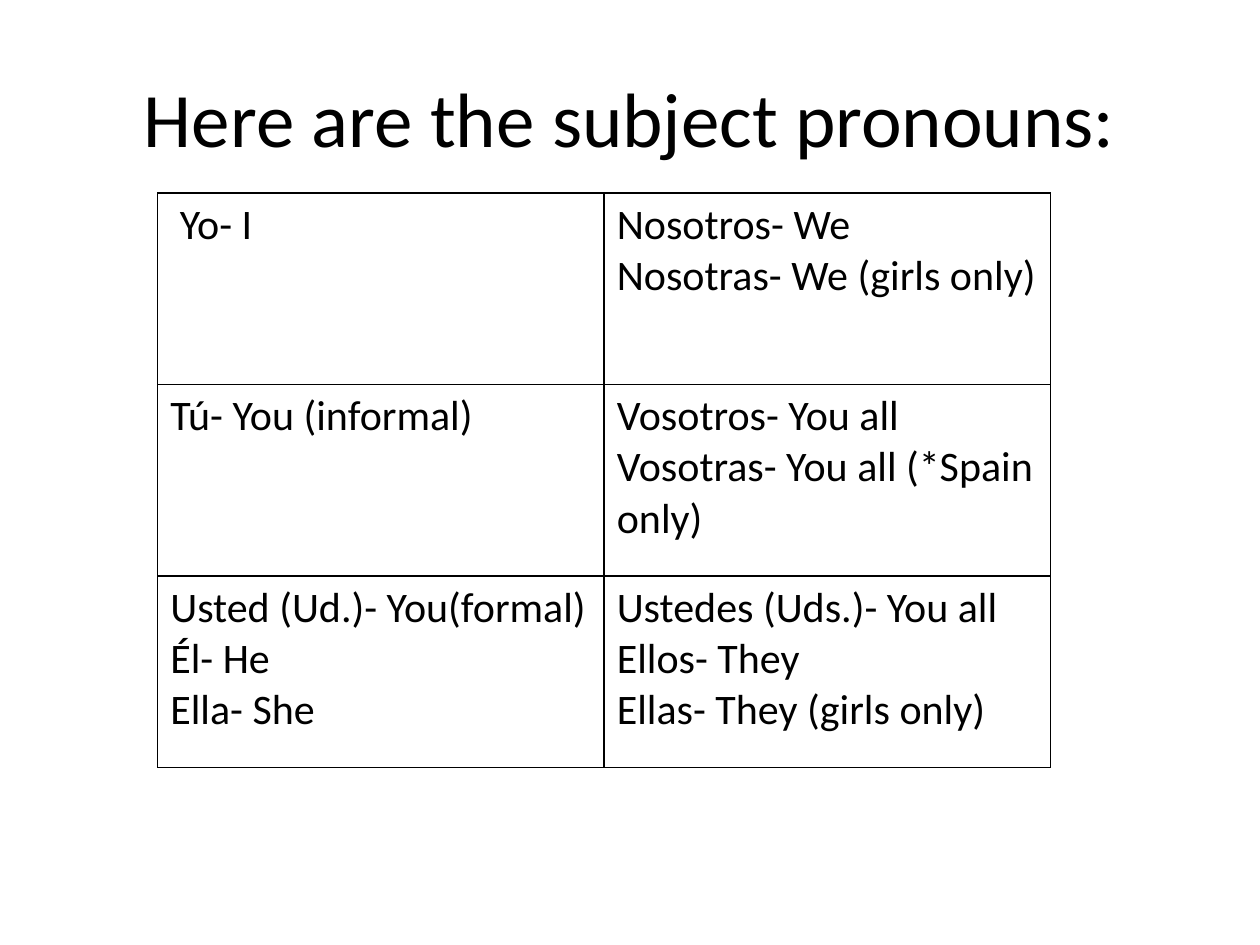
from lxml import etree
from pptx import Presentation
from pptx.dml.color import RGBColor
from pptx.enum.text import MSO_ANCHOR, PP_ALIGN
from pptx.oxml.ns import qn
from pptx.util import Cm, Pt

MIDDLE = MSO_ANCHOR.MIDDLE
CENTER = PP_ALIGN.CENTER
COLORS = {"text": "000000", "border": "000000", "background": "FFFFFF"}
FONT = "Calibri"
PRONOUNS = [
    [" Yo- I", "Nosotros- We\nNosotras- We (girls only)"],
    ["Tú- You (informal)", "Vosotros- You all\nVosotras- You all (*Spain only)"],
    ["Usted (Ud.)- You(formal)\nÉl- He\nElla- She",
     "Ustedes (Uds.)- You all\nEllos- They\nEllas- They (girls only)"],
]


def set_font(paragraph, size):
    paragraph.font.name = FONT
    paragraph.font.size = Pt(size)
    paragraph.font.color.rgb = RGBColor.from_string(COLORS["text"])


def add_borders(cell):
    properties = cell._tc.get_or_add_tcPr()
    for position, side in enumerate(("lnL", "lnR", "lnT", "lnB")):
        line = etree.Element(qn(f"a:{side}"), w=str(Pt(1)))
        fill = etree.SubElement(line, qn("a:solidFill"))
        etree.SubElement(fill, qn("a:srgbClr"), val=COLORS["border"])
        properties.insert(position, line)


presentation = Presentation()
presentation.slide_width = Cm(25.4)
presentation.slide_height = Cm(19.05)
slide = presentation.slides.add_slide(presentation.slide_layouts[6])
slide.background.fill.solid()
slide.background.fill.fore_color.rgb = RGBColor.from_string(COLORS["background"])

# Title
title = slide.shapes.add_textbox(Cm(1.27), Cm(0.76), Cm(22.86), Cm(3.18))
title.text_frame.word_wrap = True
title.text_frame.vertical_anchor = MIDDLE
paragraph = title.text_frame.paragraphs[0]
paragraph.text = "Here are the subject pronouns:"
paragraph.alignment = CENTER
set_font(paragraph, 44)

# Pronoun table: singular on the left, plural on the right
frame = slide.shapes.add_table(3, 2, Cm(3.18), Cm(3.89), Cm(18), Cm(11.58))
table = frame.table
table.first_row = False
table.horz_banding = False
for row_index, row in enumerate(PRONOUNS):
    for column_index, text in enumerate(row):
        cell = table.cell(row_index, column_index)
        cell.text = text
        cell.fill.background()
        add_borders(cell)
        for paragraph in cell.text_frame.paragraphs:
            set_font(paragraph, 24)

presentation.save("out.pptx")
